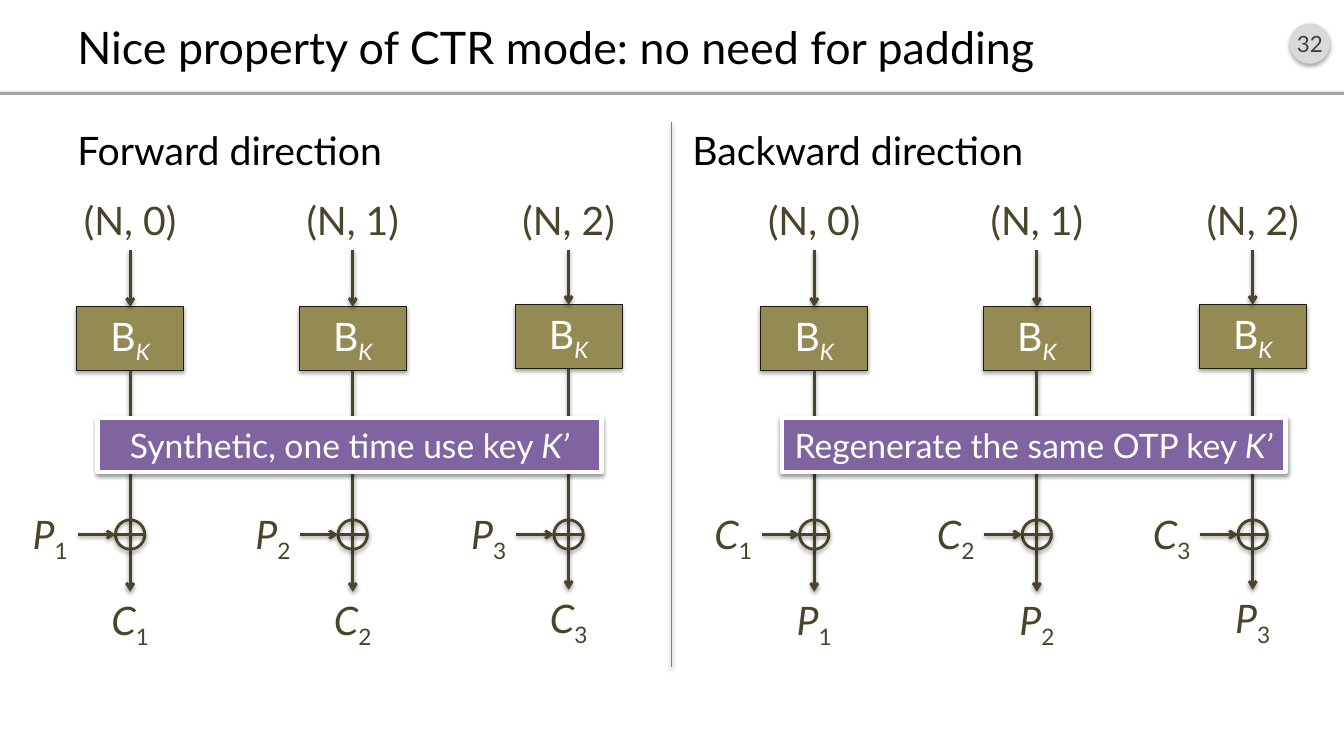
from dataclasses import dataclass

from lxml.etree import SubElement
from pptx import Presentation
from pptx.dml.color import RGBColor
from pptx.enum.shapes import MSO_CONNECTOR, MSO_SHAPE
from pptx.enum.text import MSO_ANCHOR, PP_ALIGN
from pptx.oxml.ns import qn
from pptx.util import Cm, Pt

TITLE = "Nice property of CTR mode: no need for padding"
PAGE = "32"
BLOCK_LABEL = [("B", ""), ("K", "italic sub")]
NONCES = ["(N, 0)", "(N, 1)", "(N, 2)"]
DIRECTIONS = [
    {"heading": "Forward direction", "heading_left": 1.7, "shift": 0,
     "input": "P", "output": "C", "key": "Synthetic, one time use key "},
    {"heading": "Backward direction", "heading_left": 17.2, "shift": 17.24,
     "input": "C", "output": "P", "key": "Regenerate the same OTP key "},
]
KEY_NAME = "K’"


@dataclass(frozen=True)
class Theme:
    font: str = "Lato"
    black: str = "000000"
    white: str = "FFFFFF"
    ink: str = "4A452A"
    block: str = "948A54"
    block_edge: str = "1E1C11"
    banner: str = "8064A2"
    badge: str = "D9D9D9"
    badge_text: str = "404040"
    rule: str = "A6A6A6"
    divider: str = "808080"
    title_size: float = 32
    body_size: float = 28
    banner_size: float = 24
    page_size: float = 16
    hairline: float = 0.75
    stroke: float = 2
    frame: float = 3


THEME = Theme()
CENTERS = [3.28, 8.89, 14.33]
RISES = [0, 0, 0.05]
LABEL_WIDTH, LABEL_HEIGHT = 4, 1.45
NONCE_TOP, NONCE_ARROW_TOP = 4.83, 6.3
BLOCK_TOP, BLOCK_WIDTH, BLOCK_HEIGHT = 7.73, 2.7, 1.61
XOR_Y, XOR_RADIUS = 13.47, 0.37
INPUT_GAP, INPUT_WIDTH = 1.32, 1.96
OUTPUT_TOP = 14.91
BANNER_LEFT, BANNER_TOP, BANNER_WIDTH, BANNER_HEIGHT = 2.46, 10.54, 12.7, 1.35


def add_shadow(shape, opacity, distance):
    effects = SubElement(shape._element.spPr, qn("a:effectLst"))
    shadow = SubElement(effects, qn("a:outerShdw"), blurRad=str(Pt(3.1)),
                        dist=str(Pt(distance)), dir="5400000",
                        rotWithShape="0")
    color = SubElement(shadow, qn("a:srgbClr"), val=THEME.black)
    SubElement(color, qn("a:alpha"), val=str(opacity * 1000))


def write(shape, runs, size, color, align=PP_ALIGN.LEFT,
          anchor=MSO_ANCHOR.TOP, side_inset=0.25):
    frame = shape.text_frame
    frame.word_wrap = True
    frame.vertical_anchor = anchor
    frame.margin_left = frame.margin_right = Cm(side_inset)
    paragraph = frame.paragraphs[0]
    paragraph.alignment = align
    for text, style in runs:
        run = paragraph.add_run()
        run.text = text
        run.font.name = THEME.font
        run.font.size = Pt(size)
        run.font.color.rgb = RGBColor.from_string(color)
        run.font.italic = "italic" in style
        if "sub" in style:
            run._r.get_or_add_rPr().set("baseline", "-25000")


def add_label(slide, left, top, width, height, runs, size, color, **layout):
    label = slide.shapes.add_textbox(Cm(left), Cm(top), Cm(width), Cm(height))
    write(label, runs, size, color, **layout)


def add_figure(slide, kind, left, top, width, height, fill=None, edge=None,
               weight=0, shadow=(35, 1.8)):
    figure = slide.shapes.add_shape(kind, Cm(left), Cm(top), Cm(width), Cm(height))
    if fill:
        figure.fill.solid()
        figure.fill.fore_color.rgb = RGBColor.from_string(fill)
    else:
        figure.fill.background()
    if edge:
        figure.line.color.rgb = RGBColor.from_string(edge)
        figure.line.width = Pt(weight)
    else:
        figure.line.fill.background()
    if shadow:
        add_shadow(figure, *shadow)
    else:
        figure.shadow.inherit = False
    return figure


def add_wire(slide, x1, y1, x2, y2, color=THEME.ink, weight=THEME.stroke,
             arrow=False):
    wire = slide.shapes.add_connector(
        MSO_CONNECTOR.STRAIGHT, Cm(x1), Cm(y1), Cm(x2), Cm(y2))
    wire.line.color.rgb = RGBColor.from_string(color)
    wire.line.width = Pt(weight)
    if arrow:
        SubElement(wire._element.spPr.find(qn("a:ln")), qn("a:tailEnd"), type="arrow")
    add_shadow(wire, 38, 1.6)


def add_column(slide, center, rise, number, nonce, direction):
    block_top = BLOCK_TOP - rise
    output_top = OUTPUT_TOP - rise
    xor_left, xor_right = center - XOR_RADIUS, center + XOR_RADIUS
    input_right = center - INPUT_GAP
    label_left = center - LABEL_WIDTH / 2

    def numbered(letter):
        return [(letter, "italic"), (str(number), "sub")]

    block = add_figure(slide, MSO_SHAPE.RECTANGLE, center - BLOCK_WIDTH / 2,
                       block_top, BLOCK_WIDTH, BLOCK_HEIGHT,
                       THEME.block, THEME.block_edge, THEME.hairline)
    write(block, BLOCK_LABEL, THEME.body_size, THEME.white,
          PP_ALIGN.CENTER, MSO_ANCHOR.MIDDLE)
    add_wire(slide, center, NONCE_ARROW_TOP, center, block_top, arrow=True)
    add_wire(slide, center, block_top + BLOCK_HEIGHT, center, output_top, arrow=True)
    add_figure(slide, MSO_SHAPE.OVAL, xor_left, XOR_Y - XOR_RADIUS,
               2 * XOR_RADIUS, 2 * XOR_RADIUS, None, THEME.ink, THEME.stroke)
    add_wire(slide, xor_left, XOR_Y, xor_right, XOR_Y)
    add_wire(slide, input_right, XOR_Y, xor_left, XOR_Y, arrow=True)

    for left, top, width, runs, align in [
        (label_left, NONCE_TOP, LABEL_WIDTH, [(nonce, "")], PP_ALIGN.CENTER),
        (label_left, output_top, LABEL_WIDTH, numbered(direction["output"]),
         PP_ALIGN.CENTER),
        (input_right - INPUT_WIDTH, XOR_Y - LABEL_HEIGHT / 2, INPUT_WIDTH,
         numbered(direction["input"]), PP_ALIGN.RIGHT),
    ]:
        add_label(slide, left, top, width, LABEL_HEIGHT, runs,
                  THEME.body_size, THEME.ink, align=align)


def add_direction(slide, direction):
    shift = direction["shift"]
    add_label(slide, direction["heading_left"], 3.07, 14.96, 1.78,
              [(direction["heading"], "")], THEME.body_size, THEME.black)
    for number, (center, rise, nonce) in enumerate(zip(CENTERS, RISES, NONCES), 1):
        add_column(slide, center + shift, rise, number, nonce, direction)
    banner = add_figure(slide, MSO_SHAPE.RECTANGLE, BANNER_LEFT + shift, BANNER_TOP,
                        BANNER_WIDTH, BANNER_HEIGHT, THEME.banner, THEME.white,
                        THEME.frame, (38, 1.6))
    write(banner, [(direction["key"], ""), (KEY_NAME, "italic")], THEME.banner_size,
          THEME.white, PP_ALIGN.CENTER, MSO_ANCHOR.MIDDLE, 0)


def main():
    deck = Presentation()
    deck.slide_width, deck.slide_height = Cm(33.87), Cm(19.05)
    slide = deck.slides.add_slide(deck.slide_layouts[6])
    badge = add_figure(slide, MSO_SHAPE.OVAL, 32.5, 0.59, 1.02, 1.02, THEME.badge)
    write(badge, [(PAGE, "")], THEME.page_size, THEME.badge_text,
          PP_ALIGN.CENTER, MSO_ANCHOR.MIDDLE, 0)
    add_figure(slide, MSO_SHAPE.RECTANGLE, 0, 2.31, 33.87, 0.08, THEME.rule, shadow=None)
    add_label(slide, 1.7, 0.41, 30.48, 1.52, [(TITLE, "")], THEME.title_size,
              THEME.black, anchor=MSO_ANCHOR.MIDDLE)
    add_wire(slide, 16.93, 3.07, 16.93, 16.81, THEME.divider, THEME.hairline)
    for direction in DIRECTIONS:
        add_direction(slide, direction)
    deck.save("out.pptx")


if __name__ == "__main__":
    main()
